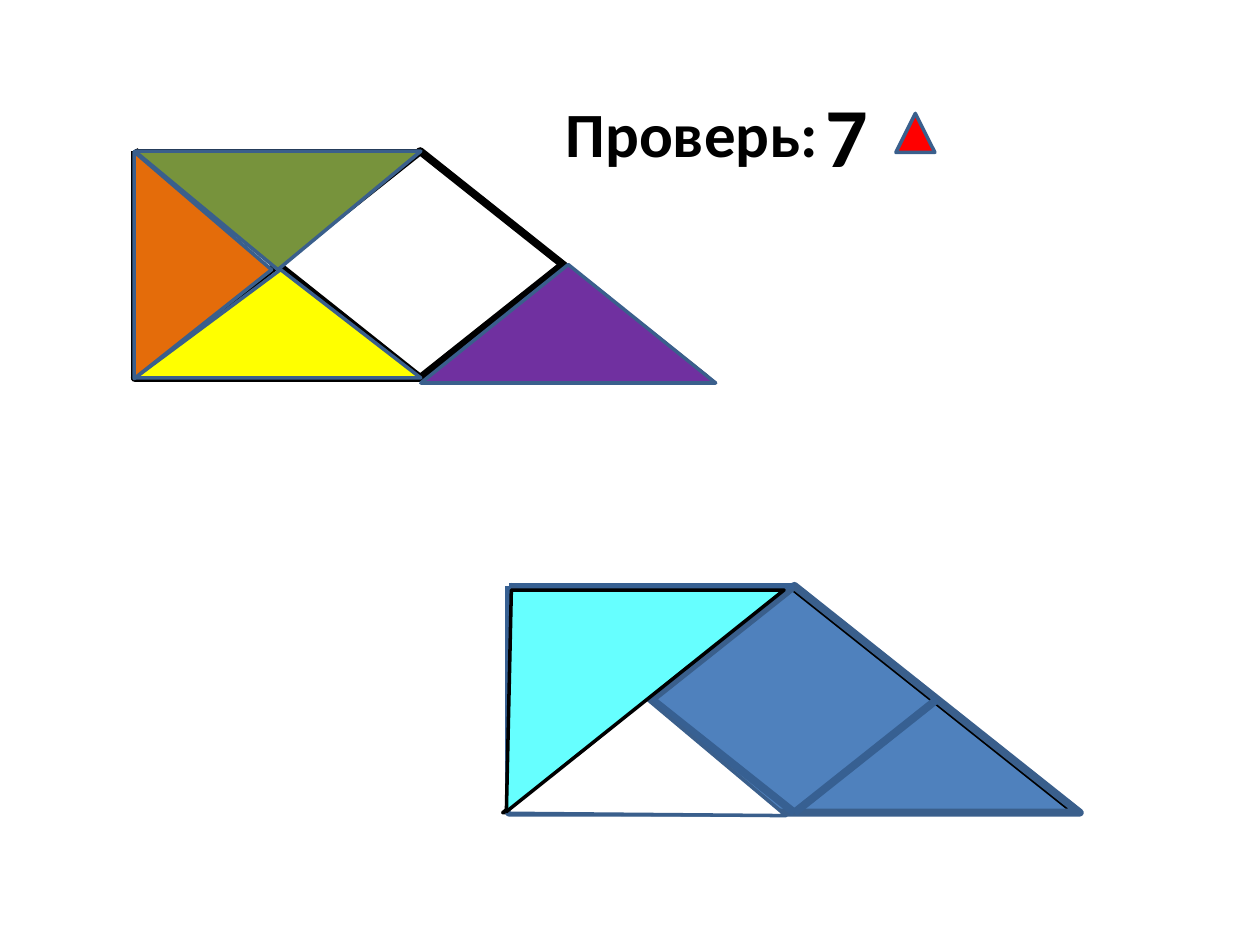
from dataclasses import dataclass

from lxml import etree
from pptx import Presentation
from pptx.dml.color import RGBColor
from pptx.enum import shapes, text
from pptx.oxml.ns import qn
from pptx.util import Inches, Pt


@dataclass(frozen=True)
class Theme:
    font: str = "Calibri"
    title_size: int = 36
    number_size: int = 48
    thin: float = 2
    medium: float = 3
    thick: float = 4.5
    black: str = "000000"
    outline: str = "3A5F8C"
    navy: str = "376092"
    blue: str = "4F81BD"
    purple: str = "7030A0"
    yellow: str = "FFFF00"
    orange: str = "E46C0A"
    green: str = "77933C"
    white: str = "FFFFFF"
    cyan: str = "66FFFF"
    red: str = "FF0000"


THEME = Theme()
FRAME_W, FRAME_H = 4.53, 1.8


def set_line(s, color, width):
    s.line.color.rgb = RGBColor.from_string(color)
    s.line.width = Pt(width)


def add_triangle(parent, box, fill=None, line=THEME.outline, width=THEME.thin,
                 apex=0.5, rotation=0):
    s = parent.add_shape(shapes.MSO_SHAPE.ISOSCELES_TRIANGLE, *map(Inches, box))
    s.shadow.inherit = False
    s.adjustments[0] = apex
    s.rotation = rotation
    if fill:
        s.fill.solid()
        s.fill.fore_color.rgb = RGBColor.from_string(fill)
    else:
        s.fill.background()
    set_line(s, line, width)


def add_line(parent, start, end, color, width):
    s = parent.add_connector(shapes.MSO_CONNECTOR.STRAIGHT,
                             *map(Inches, (*start, *end)))
    set_line(s, color, width)
    etree.SubElement(s._element.spPr, qn("a:effectLst"))


def add_frame(parent, x, y, outline, color):
    """Draw the large triangle and the lines that complete the trapezoid."""
    middle, right = x + FRAME_W / 2, x + FRAME_W * 3 / 4
    bottom = y + FRAME_H
    add_triangle(parent, (x, y, FRAME_W, FRAME_H), line=outline,
                 width=THEME.thick)
    for start, end, width in (
        ((x, y), (x, bottom), THEME.thick),
        ((x, y), (middle, y), THEME.medium),
        ((x, y), (middle, bottom), THEME.thick),
        ((middle, bottom), (right, y + FRAME_H / 2), THEME.thick),
    ):
        add_line(parent, start, end, color, width)


def write_text(s, content, *, box, size, margin_left):
    s.left, s.top, s.width, s.height = map(Inches, box)
    tf = s.text_frame
    tf.word_wrap = True
    tf.auto_size = text.MSO_AUTO_SIZE.SHAPE_TO_FIT_TEXT
    tf.vertical_anchor = text.MSO_ANCHOR.TOP
    tf.margin_left = Inches(margin_left)
    p = tf.paragraphs[0]
    p.alignment = text.PP_ALIGN.LEFT
    r = p.add_run()
    r.text = content
    r.font.name = THEME.font
    r.font.size = Pt(size)
    r.font.bold = True
    r.font.color.rgb = RGBColor.from_string(THEME.black)


def main():
    prs = Presentation()
    prs.slide_width, prs.slide_height = Inches(10), Inches(7.5)
    slide = prs.slides.add_slide(prs.slide_layouts[5])
    tree = slide.shapes

    add_triangle(tree, (3.99, 4.65, FRAME_W, FRAME_H), THEME.blue,
                 line=THEME.black)
    write_text(tree.title, "Проверь:", box=(3.2, 0.7, 4.06, 0.71),
               size=THEME.title_size, margin_left=1.29)
    add_frame(tree.add_group_shape().shapes, 1.07, 1.2, THEME.black, THEME.black)
    add_frame(tree, 4.04, 4.65, THEME.outline, THEME.navy)

    for box, fill, line, apex, rotation in (
        ((3.34, 2.1, 2.34, 0.94), THEME.purple, THEME.outline, 0.5, 0),
        ((1.07, 2.14, 2.27, 0.86), THEME.yellow, THEME.outline, 0.51, 0),
        ((0.71, 1.56, 1.8, 1.09), THEME.orange, THEME.outline, 0.52, 90),
        ((1.07, 1.2, 2.27, 0.94), THEME.green, THEME.outline, 0.5, 180),
        ((3.29, 5.4, 2.83, 1.4), THEME.white, THEME.outline, 0.6, 220),
        ((3.29, 4.36, 2.82, 1.35), THEME.cyan, THEME.black, 0.4, 321.4),
        ((7.11, 0.9, 0.31, 0.31), THEME.red, THEME.outline, 0.5, 0),
    ):
        add_triangle(tree, box, fill, line=line, apex=apex, rotation=rotation)

    number_box = (5.91, 0.61, 1.56, 0.91)
    write_text(tree.add_textbox(*map(Inches, number_box)), "7", box=number_box,
               size=THEME.number_size, margin_left=0.64)
    prs.save("out.pptx")


if __name__ == "__main__":
    main()
